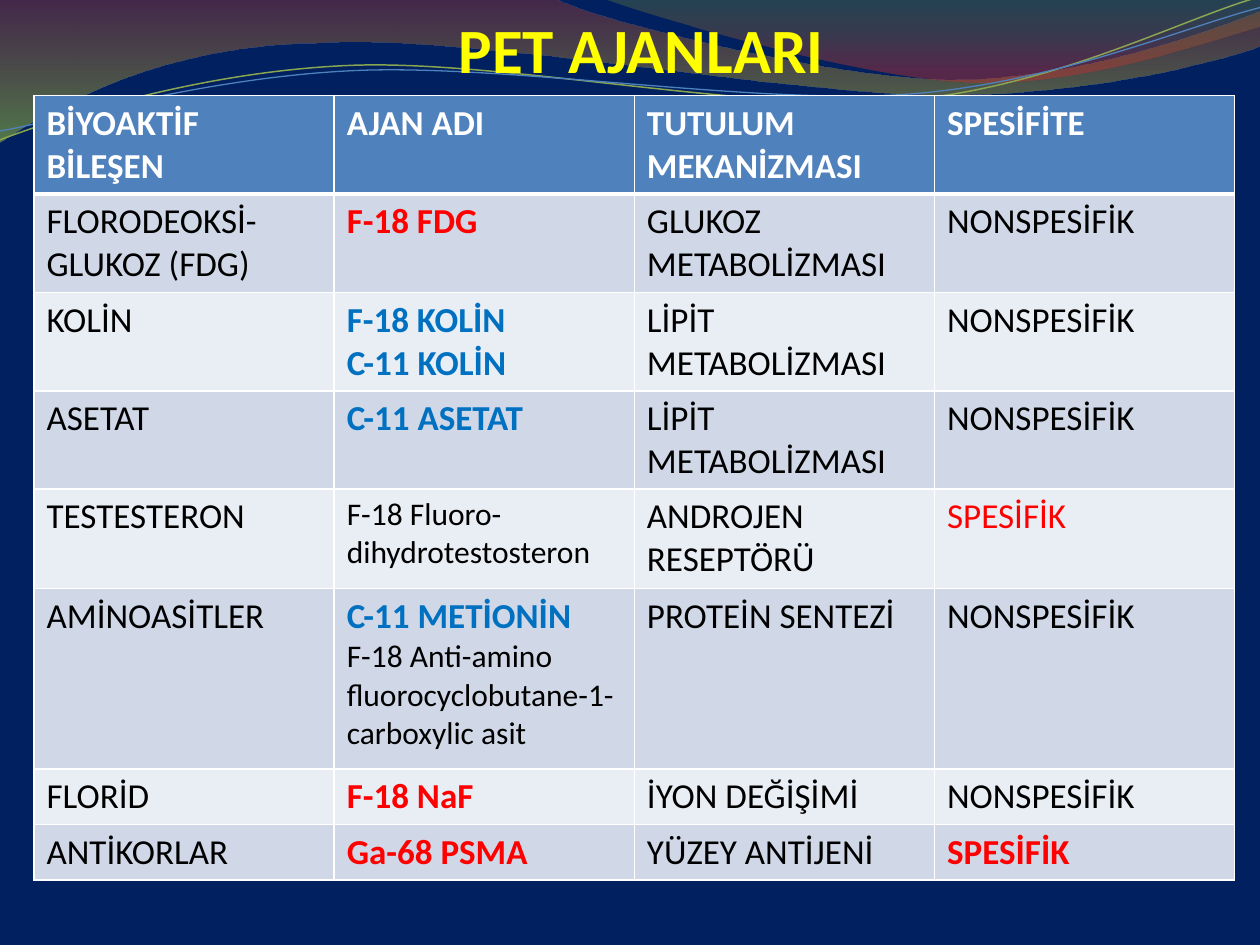
from lxml.etree import SubElement
from pptx import Presentation
from pptx.dml.color import RGBColor
from pptx.enum.text import MSO_ANCHOR, MSO_AUTO_SIZE, PP_ALIGN
from pptx.oxml import parse_xml
from pptx.oxml.ns import nsdecls, qn
from pptx.util import Inches, Pt

TITLE = "PET AJANLARI"
HEAD = ["BİYOAKTİF BİLEŞEN", "AJAN ADI", "TUTULUM MEKANİZMASI", "SPESİFİTE"]
ROWS = [
    ["FLORODEOKSİ-GLUKOZ (FDG)", [("F-18 FDG", "red")], "GLUKOZ METABOLİZMASI", "NONSPESİFİK"],
    ["KOLİN", [("F-18 KOLİN", "blue"), ("C-11 KOLİN", "blue")], "LİPİT METABOLİZMASI", "NONSPESİFİK"],
    ["ASETAT", [("C-11 ASETAT", "blue")], "LİPİT METABOLİZMASI", "NONSPESİFİK"],
    ["TESTESTERON", [("F-18 Fluoro-dihydrotestosteron", "small")], "ANDROJEN RESEPTÖRÜ",
     [("SPESİFİK", "plain red")]],
    ["AMİNOASİTLER", [("C-11 METİONİN", "blue"),
                      ("F-18 Anti-amino fluorocyclobutane-1-carboxylic asit", "small")],
     "PROTEİN SENTEZİ", "NONSPESİFİK"],
    ["FLORİD", [("F-18 NaF", "red")], "İYON DEĞİŞİMİ", "NONSPESİFİK"],
    ["ANTİKORLAR", [("Ga-68 PSMA", "red")], "YÜZEY ANTİJENİ", [("SPESİFİK", "red")]],
]
HEIGHTS = [0.77] * 4 + [0.79, 1.43, 0.43, 0.43]
STYLES = {
    "head": (20, "FFFFFF", True),
    "body": (20, "000000", False),
    "small": (18, "000000", False),
    "red": (20, "FF0000", True),
    "plain red": (20, "FF0000", False),
    "blue": (20, "0070C0", True),
}
BANDS = ["D0D8E8", "E9EDF4"]
BANDED_WAVES = [
    ([(0, -0.01), (4.4, -0.01), (4.76, 0.17, 6.64, 0.63, 7.58, 0.63), (8.53, 0.63, 9.58, 0.26, 10, 0.09),
      (10.01, 0.36), (9.83, 0.44, 8.7, 0.76, 7.46, 0.75), (6.22, 0.75, 3.82, 0.28, 2.57, 0.34),
      (1.29, 0.35, 0.46, 0.83, -0.01, 1.13)], [(0, "973330", 45), (100, "95C238", 55)]),
    ([(4.79, -0.01), (5.09, 0.11, 6.82, 0.62, 7.69, 0.65), (8.56, 0.69, 9.61, 0.32, 10, 0.21), (10, 0)],
     [(0, "769537", 30), (80, "BE3330", 45)]),
]
LINE_WAVES = [
    ([(0, 1.11), (0.48, 0.93, 1.58, 0.57, 2.77, 0.52), (3.95, 0.47, 5.93, 0.89, 7.13, 0.8),
      (8.33, 0.71, 9.38, 0.15, 9.98, -0.02)], "89A54F", 0.85),
    ([(0, 1.04), (0.47, 0.96, 1.64, 0.61, 2.83, 0.56), (4.03, 0.51, 5.97, 0.83, 7.17, 0.75),
      (8.36, 0.67, 9.41, 0.21, 10, 0.06)], "4F81BD", 0.75),
]


def rgb(color):
    return RGBColor.from_string(color)


def add_wave(s, segments, close):
    """Draw a freeform whose six-number segments are cubic curves."""
    pts = [(round(seg[i] * 100), round(seg[i + 1] * 100)) for seg in segments for i in range(0, len(seg), 2)]
    fb = s.shapes.build_freeform(*pts[0], scale=Inches(0.01))
    fb.add_line_segments(pts[1:], close=close)
    sp = fb.convert_to_shape()
    sp.shadow.inherit = False
    lines = iter(list(sp._element.iter(qn("a:lnTo"))))
    for seg in segments[1:]:
        first = next(lines)
        if len(seg) == 6:
            first.tag = qn("a:cubicBezTo")
            for extra in (next(lines), next(lines)):
                first.append(extra[0])
                extra.getparent().remove(extra)
    return sp


def fade(sp, stops):
    sp.line.fill.background()
    sp.fill.background()
    gs = "".join(f'<a:gs pos="{pos * 1000}"><a:srgbClr val="{color}"><a:alpha val="{alpha * 1000}"/>'
                 f'</a:srgbClr></a:gs>' for pos, color, alpha in stops)
    grad = parse_xml(f'<a:gradFill {nsdecls("a")} rotWithShape="1"><a:gsLst>{gs}</a:gsLst>'
                     f'<a:lin ang="5400000" scaled="0"/></a:gradFill>')
    old = sp._element.spPr.find(qn("a:noFill"))
    old.getparent().replace(old, grad)


def set_font(p, size, color, bold):
    p.font.name, p.font.size, p.font.bold = "Calibri", Pt(size), bold
    p.font.color.rgb = rgb(color)


def set_borders(cell, top, bottom):
    tc_pr = cell._tc.get_or_add_tcPr()
    for i, (side, width) in enumerate(zip("LRTB", (1, 1, top, bottom))):
        ln = SubElement(tc_pr, qn(f"a:ln{side}"), w=str(Pt(width)))
        SubElement(SubElement(ln, qn("a:solidFill")), qn("a:srgbClr"), val="FFFFFF")
        tc_pr.insert(i, ln)


def fill_cell(cell, content, style, color):
    cell.fill.solid()
    cell.fill.fore_color.rgb = rgb(color)
    lines = [(content, style)] if isinstance(content, str) else content
    tf = cell.text_frame
    for i, (text, name) in enumerate(lines):
        p = tf.add_paragraph() if i else tf.paragraphs[0]
        p.text = text
        set_font(p, *STYLES[name])


def add_title(s):
    title = s.shapes.title
    title.left, title.top, title.width, title.height = (Inches(v) for v in (0.59, 0.13, 9, 0.55))
    tf = title.text_frame
    tf.text = TITLE
    tf.auto_size, tf.word_wrap = MSO_AUTO_SIZE.NONE, True
    tf.vertical_anchor = MSO_ANCHOR.BOTTOM
    tf.margin_left = tf.margin_right = tf.margin_bottom = 0
    p = tf.paragraphs[0]
    p.alignment = PP_ALIGN.CENTER
    set_font(p, 36, "FFFF00", True)
    title._element.getparent().append(title._element)


def add_agents(s):
    grid = [HEAD] + ROWS
    table = s.shapes.add_table(len(grid), len(HEAD), Inches(0.27), Inches(0.76),
                               Inches(9.53), Inches(sum(HEIGHTS))).table
    for r, (row, height) in enumerate(zip(grid, HEIGHTS)):
        table.rows[r].height = Inches(height)
        for c, content in enumerate(row):
            cell = table.cell(r, c)
            fill_cell(cell, content, "body" if r else "head", BANDS[(r - 1) % 2] if r else "4F81BD")
            set_borders(cell, 3 if r == 1 else 1, 1 if r else 3)


def main():
    prs = Presentation()
    prs.slide_width, prs.slide_height = Inches(10), Inches(7.5)
    s = prs.slides.add_slide(prs.slide_layouts[5])
    s.background.fill.solid()
    s.background.fill.fore_color.rgb = rgb("002060")
    for segments, stops in BANDED_WAVES:
        fade(add_wave(s, segments, True), stops)
    for segments, color, width in LINE_WAVES:
        sp = add_wave(s, segments, False)
        sp.fill.background()
        sp.line.color.rgb, sp.line.width = rgb(color), Pt(width)
    add_title(s)
    add_agents(s)
    prs.save("out.pptx")


if __name__ == "__main__":
    main()
